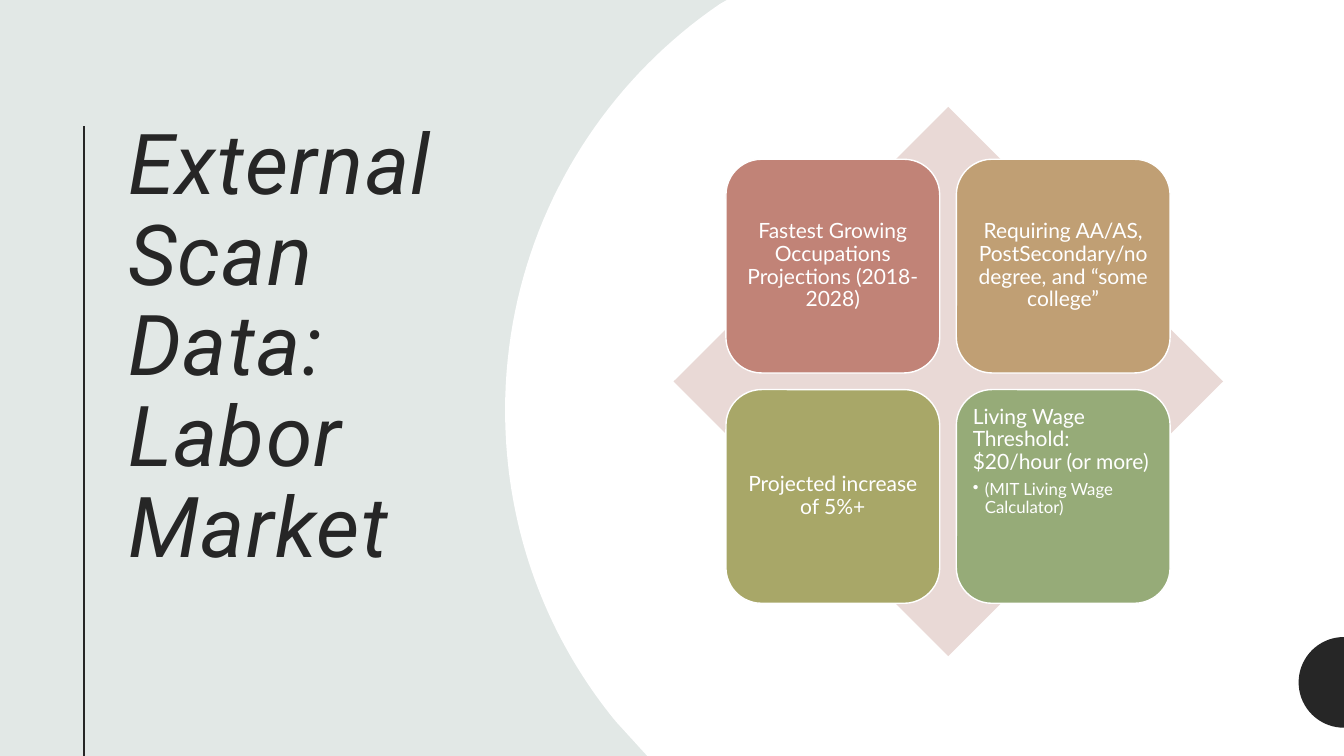
import math
from dataclasses import dataclass

from lxml import etree
from pptx import Presentation
from pptx.dml.color import RGBColor
from pptx.enum.shapes import MSO_CONNECTOR, MSO_SHAPE
from pptx.enum.text import MSO_ANCHOR, MSO_AUTO_SIZE, PP_ALIGN
from pptx.oxml.ns import qn
from pptx.util import Inches, Pt

DIAMOND, ROUNDED = MSO_SHAPE.DIAMOND, MSO_SHAPE.ROUNDED_RECTANGLE
TOP, MIDDLE = MSO_ANCHOR.TOP, MSO_ANCHOR.MIDDLE
LEFT, CENTER = PP_ALIGN.LEFT, PP_ALIGN.CENTER
DARK, PALE, WHITE = "262626", "E2E8E6", "FFFFFF"
SLIDE_W, SLIDE_H = 13.33, 7.5
CARD, STEP = 2.12, 2.285
GRID_LEFT, GRID_TOP = 7.2, 1.58

Point = tuple[float, float]


@dataclass
class Card:
    text: str
    fill: str
    detail: str = ""


CARDS = [
    Card("Fastest Growing Occupations Projections (2018-2028)", "C18377"),
    Card("Requiring AA/AS, PostSecondary/no degree, and “some college”", "C09F74"),
    Card("Projected increase of 5%+", "A8A768"),
    Card("Living Wage Threshold: $20/hour (or more)", "96AB78",
         "(MIT Living Wage Calculator)"),
]


def rgb(value: str) -> RGBColor:
    return RGBColor.from_string(value)


def set_attrs(target, values: dict) -> None:
    for name, value in values.items():
        setattr(target, name, value)


def paint(sp, fill: str, line: str = "") -> None:
    sp.shadow.inherit = False
    sp.fill.solid()
    sp.fill.fore_color.rgb = rgb(fill)
    if line:
        sp.line.color.rgb = rgb(line)
        sp.line.width = Pt(1)
    else:
        sp.line.fill.background()


def add_run(p, text: str, color: str, font: dict):
    r = p.add_run()
    r.text = text
    set_attrs(r.font, font)
    r.font.color.rgb = rgb(color)
    return r


def add_outline(slide, points: list[Point], fill: str) -> None:
    emu = [(Inches(x), Inches(y)) for x, y in points]
    builder = slide.shapes.build_freeform(*emu[0])
    builder.add_line_segments(emu[1:], close=True)
    paint(builder.convert_to_shape(), fill)


def curve(a: Point, b: Point, c: Point, d: Point, steps: int = 40) -> list[Point]:
    """Points along a cubic curve, without its start."""
    def at(t: float, i: int) -> float:
        u = 1 - t
        return u**3 * a[i] + 3 * u * u * t * b[i] + 3 * u * t * t * c[i] + t**3 * d[i]
    return [(at(n / steps, 0), at(n / steps, 1)) for n in range(1, steps + 1)]


def add_card(slide, card: Card, left: float, top: float) -> None:
    sp = slide.shapes.add_shape(ROUNDED, Inches(left), Inches(top),
                                Inches(CARD), Inches(CARD))
    paint(sp, card.fill, WHITE)
    tf = sp.text_frame
    margins = {f"margin_{side}": Inches(0.06) for side in ("left", "top", "right", "bottom")}
    set_attrs(tf, margins | {"word_wrap": True,
                             "vertical_anchor": TOP if card.detail else MIDDLE})
    p = tf.paragraphs[0]
    set_attrs(p, {"alignment": LEFT if card.detail else CENTER, "line_spacing": 0.9})
    add_run(p, card.text, WHITE, {"name": "Lato", "size": Pt(15)})
    if card.detail:
        p.space_after = Pt(5)
        p = tf.add_paragraph()
        set_attrs(p, {"level": 1, "alignment": LEFT, "line_spacing": 0.9})
        pPr = p._p.get_or_add_pPr()
        pPr.set("marL", str(Inches(0.12)))
        pPr.set("indent", str(Inches(-0.12)))
        etree.SubElement(pPr, qn("a:buChar")).set("char", "•")
        add_run(p, card.detail, WHITE, {"name": "Lato", "size": Pt(12)})


def main() -> None:
    prs = Presentation()
    prs.slide_width, prs.slide_height = Inches(SLIDE_W), Inches(SLIDE_H)
    slide = prs.slides.add_slide(prs.slide_layouts[5])
    slide.background.fill.solid()
    slide.background.fill.fore_color.rgb = rgb(PALE)

    # Title
    title = slide.shapes.title
    set_attrs(title, {"left": Inches(1.17), "top": Inches(1.16),
                      "width": Inches(3.41), "height": Inches(5.26)})
    tf = title.text_frame
    set_attrs(tf, {"word_wrap": True, "auto_size": MSO_AUTO_SIZE.NONE,
                   "vertical_anchor": TOP})
    p = tf.paragraphs[0]
    set_attrs(p, {"alignment": LEFT, "line_spacing": 0.9})
    r = add_run(p, "External Scan Data: Labor Market", DARK,
                {"name": "Roboto", "size": Pt(60), "italic": True})
    r.font._element.set("spc", "100")

    # Vertical rule beside the title
    rule = slide.shapes.add_connector(MSO_CONNECTOR.STRAIGHT, Inches(0.83), Inches(1.25),
                                      Inches(0.83), Inches(SLIDE_H))
    rule.line.color.rgb = rgb(DARK)
    rule.line.width = Pt(1.5)
    etree.SubElement(rule._element.spPr, qn("a:effectLst"))

    # White panel with a curved left edge
    low, left_most, high = (6.11, 7.16), (5.01, 4.07), (7.14, 0.04)
    add_outline(slide, [(7.21, 0), (SLIDE_W, 0), (SLIDE_W, SLIDE_H), (6.42, SLIDE_H), low,
                        *curve(low, (5.42, 6.32), (5.01, 5.25), left_most),
                        *curve(left_most, (5.01, 2.4), (5.85, 0.92), high)], WHITE)

    # Half disc on the right edge
    angles = [math.radians(90 + 5 * n) for n in range(37)]
    add_outline(slide, [(SLIDE_W + 0.45 * math.cos(a), 6.77 - 0.45 * math.sin(a))
                        for a in angles], DARK)

    # Diamond with a two-by-two grid of cards
    diamond = slide.shapes.add_shape(DIAMOND, Inches(6.68), Inches(1.06),
                                     Inches(5.45), Inches(5.45))
    paint(diamond, "E9D9D6")
    for i, card in enumerate(CARDS):
        row, col = divmod(i, 2)
        add_card(slide, card, GRID_LEFT + col * STEP, GRID_TOP + row * STEP)

    prs.save("out.pptx")


if __name__ == "__main__":
    main()
